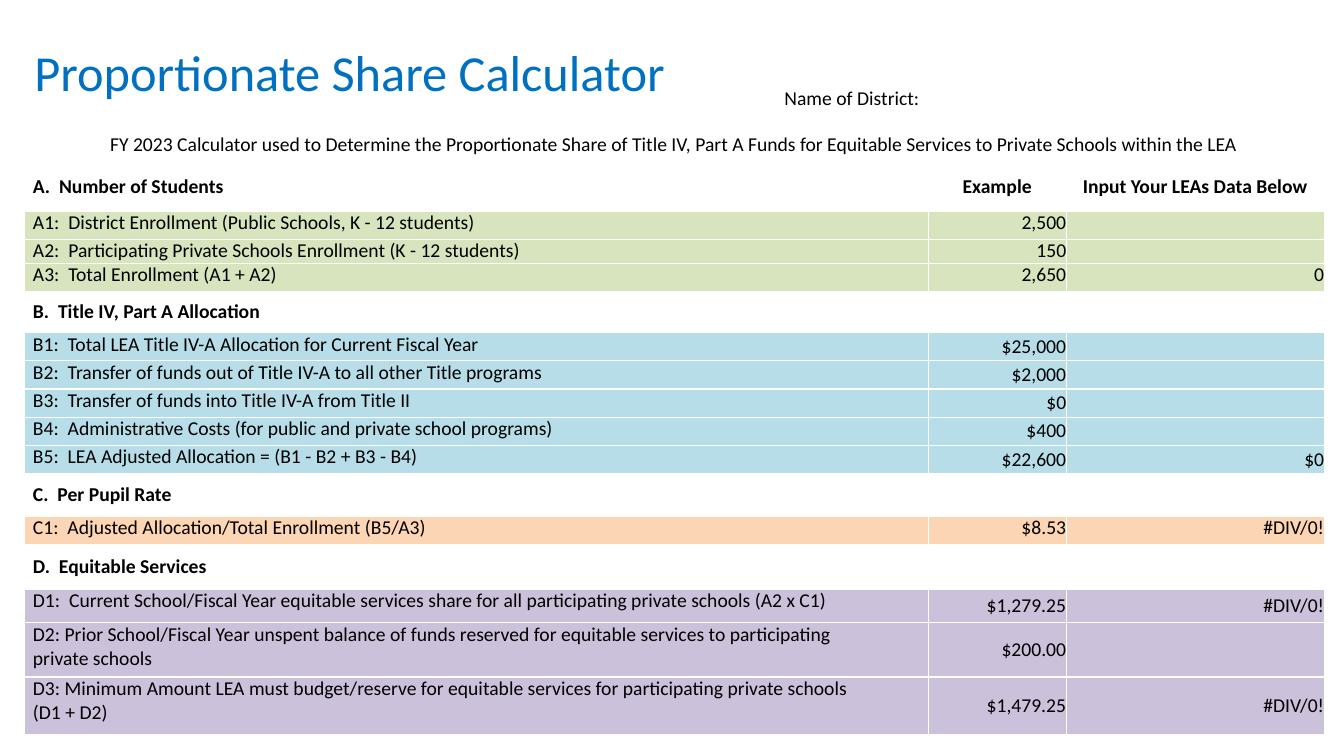
from lxml import etree
from pptx import Presentation
from pptx.dml.color import RGBColor
from pptx.enum.text import MSO_ANCHOR, PP_ALIGN
from pptx.oxml.ns import qn
from pptx.util import Cm, Pt

LEFT, CENTER, RIGHT = PP_ALIGN.LEFT, PP_ALIGN.CENTER, PP_ALIGN.RIGHT
TOP, MIDDLE, BOTTOM = MSO_ANCHOR.TOP, MSO_ANCHOR.MIDDLE, MSO_ANCHOR.BOTTOM

TITLE = "Proportionate Share Calculator"
DISTRICT = "Name of District:"
CAPTION = ("FY 2023 Calculator used to Determine the Proportionate Share of Title IV, "
           "Part A Funds for Equitable Services to Private Schools within the LEA")

# Each section: heading row, its height, fill, number anchor, then its lines.
# Each line: label, example, district value, row height.
SECTIONS = [
    (("A.  Number of Students", "Example", "Input Your LEAs Data Below"), 1.22, "green", TOP, [
        ("A1:  District Enrollment (Public Schools, K - 12 students)", "2,500", "", 0.71),
        ("A2:  Participating Private Schools Enrollment (K - 12 students)", "150", "", 0.6),
        ("A3:  Total Enrollment (A1 + A2)", "2,650", "0", 0.71),
    ]),
    (("B.  Title IV, Part A Allocation", "", ""), 1.04, "blue", MIDDLE, [
        ("B1:  Total LEA Title IV-A Allocation for Current Fiscal Year", "$25,000", "", 0.71),
        ("B2:  Transfer of funds out of Title IV-A to all other Title programs", "$2,000", "", 0.71),
        ("B3:  Transfer of funds into Title IV-A from Title II", "$0", "", 0.71),
        ("B4:  Administrative Costs (for public and private school programs)", "$400", "", 0.71),
        ("B5:  LEA Adjusted Allocation = (B1 - B2 + B3 - B4)", "$22,600", "$0", 0.71),
    ]),
    (("C.  Per Pupil Rate", "", ""), 1.08, "orange", TOP, [
        ("C1:  Adjusted Allocation/Total Enrollment (B5/A3)", "$8.53", "#DIV/0!", 0.71),
    ]),
    (("D.  Equitable Services", "", ""), 1.12, "purple", MIDDLE, [
        ("D1:  Current School/Fiscal Year equitable services share for all participating "
         "private schools (A2 x C1)", "$1,279.25", "#DIV/0!", 0.85),
        ("D2: Prior School/Fiscal Year unspent balance of funds reserved for equitable "
         "services to participating\nprivate schools", "$200.00", "", 1.37),
        ("D3: Minimum Amount LEA must budget/reserve for equitable services for "
         "participating private schools\n(D1 + D2)", "$1,479.25", "#DIV/0!", 1.46),
    ]),
]

COLORS = {"white": "FFFFFF", "black": "000000", "title": "0070C0", "green": "D7E4BD",
          "blue": "B7DEE8", "orange": "FCD5B5", "purple": "CCC1DA"}
FONT = "Calibri"
TABLE_LEFT, TABLE_TOP = 0.61, 2.11
COLUMN_WIDTHS = (22.78, 3.48, 6.5)
INTRO_HEIGHTS = (0.69, 0.56, 0.74)
PAD = Cm(0.22)


def add_run(p, text, size, color, bold=False):
    r = p.add_run()
    r.text = text
    r.font.name, r.font.size, r.font.bold = FONT, Pt(size), bold
    r.font.color.rgb = RGBColor.from_string(COLORS[color])


def fill_cell(cell, text, fill, align=LEFT, anchor=TOP, bold=False):
    cell.fill.solid()
    cell.fill.fore_color.rgb = RGBColor.from_string(COLORS[fill])
    cell.margin_left = cell.margin_right = cell.margin_top = cell.margin_bottom = 0
    cell.vertical_anchor = anchor
    tf = cell.text_frame
    if not text:
        # A small end mark keeps an empty cell from stretching its row.
        etree.SubElement(tf.paragraphs[0]._p, qn("a:endParaRPr"), sz="800")
    for i, line in enumerate(text.split("\n") if text else []):
        p = tf.add_paragraph() if i else tf.paragraphs[0]
        p.alignment = align
        add_run(p, line, 14, "black", bold)


def fill_row(row, texts, fill, aligns, anchors, bold=False):
    for cell, text, align, anchor in zip(row.cells, texts, aligns, anchors):
        fill_cell(cell, text, fill, align, anchor, bold)
    row.cells[0].margin_left = PAD


def add_calculator(s):
    heights = list(INTRO_HEIGHTS)
    for _, heading_height, _, _, lines in SECTIONS:
        heights += [heading_height] + [line[3] for line in lines]
    table = s.shapes.add_table(len(heights), len(COLUMN_WIDTHS), Cm(TABLE_LEFT), Cm(TABLE_TOP),
                               Cm(sum(COLUMN_WIDTHS)), Cm(sum(heights))).table
    table.first_row = table.horz_banding = False
    for column, width in zip(table.columns, COLUMN_WIDTHS):
        column.width = Cm(width)
    for row, height in zip(table.rows, heights):
        row.height = Cm(height)

    rows = iter(table.rows)
    fill_row(next(rows), (DISTRICT, "", ""), "white", (RIGHT,) * 3, (BOTTOM,) * 3)
    table.cell(0, 0).margin_right = PAD
    fill_row(next(rows), ("", "", ""), "white", (LEFT,) * 3, (TOP,) * 3)
    fill_row(next(rows), (CAPTION, "", ""), "white", (CENTER,) * 3, (TOP,) * 3)
    table.cell(2, 0).margin_left = 0
    for row, first_column in enumerate((1, 0, 0)):
        table.cell(row, first_column).merge(table.cell(row, 2))

    for heading, _, fill, anchor, lines in SECTIONS:
        fill_row(next(rows), heading, "white", (LEFT, CENTER, CENTER), (MIDDLE,) * 3, bold=True)
        for line in lines:
            fill_row(next(rows), line[:3], fill, (LEFT, RIGHT, RIGHT), (TOP, anchor, anchor))


def add_title(s):
    """Fill the title and bring it in front of the table."""
    sp = s.shapes.title
    sp.left, sp.top, sp.width, sp.height = Cm(0.61), Cm(0.74), Cm(29.21), Cm(2.11)
    tf = sp.text_frame
    tf.vertical_anchor = MIDDLE
    p = tf.paragraphs[0]
    p.alignment = LEFT
    add_run(p, TITLE, 36, "title")
    sp.element.getparent().append(sp.element)


def main():
    prs = Presentation()
    prs.slide_width, prs.slide_height = Cm(33.87), Cm(19.05)
    s = prs.slides.add_slide(prs.slide_layouts[5])
    add_calculator(s)
    add_title(s)
    prs.save("out.pptx")


if __name__ == "__main__":
    main()
